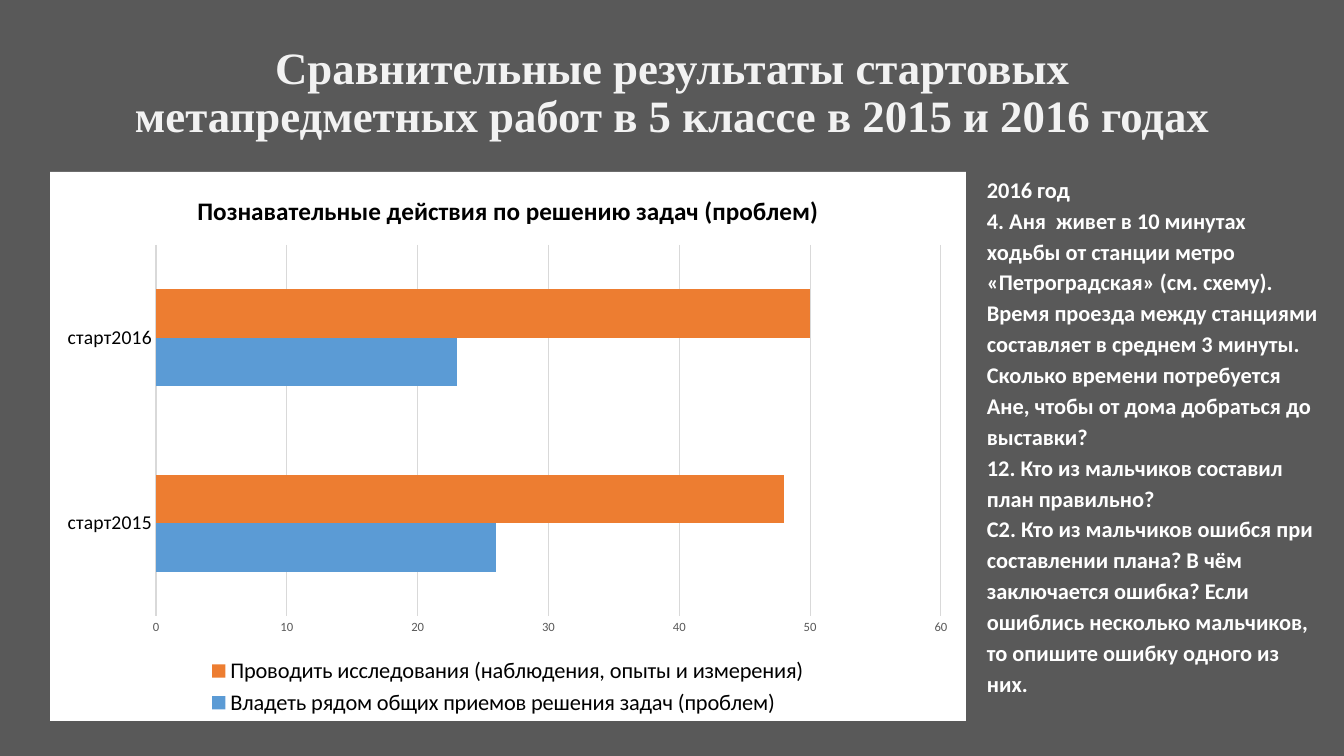
from lxml import etree
from pptx import Presentation
from pptx.chart.data import CategoryChartData
from pptx.dml.color import RGBColor
from pptx.enum.chart import XL_CHART_TYPE, XL_LEGEND_POSITION, XL_TICK_MARK
from pptx.enum.text import MSO_ANCHOR, PP_ALIGN
from pptx.oxml import parse_xml
from pptx.oxml.ns import nsdecls, qn
from pptx.util import Pt

BAR_CLUSTERED = XL_CHART_TYPE.BAR_CLUSTERED
LEGEND_BOTTOM = XL_LEGEND_POSITION.BOTTOM
NO_TICK = XL_TICK_MARK.NONE
MIDDLE = MSO_ANCHOR.MIDDLE
CENTER = PP_ALIGN.CENTER

BACKGROUND = RGBColor(0x59, 0x59, 0x59)
TITLE_COLOR = RGBColor(0xF2, 0xF2, 0xF2)
WHITE = RGBColor(0xFF, 0xFF, 0xFF)
BLACK = RGBColor(0x00, 0x00, 0x00)
GRID = RGBColor(0xD9, 0xD9, 0xD9)
BLUE = RGBColor(0x5B, 0x9B, 0xD5)
ORANGE = RGBColor(0xED, 0x7D, 0x31)

TITLE = "Сравнительные результаты стартовых метапредметных работ в 5 классе в 2015 и 2016 годах"
CHART_TITLE = "Познавательные действия по решению задач (проблем)"
CATEGORIES = ["старт2015", "старт2016"]
SERIES = [
    ("Владеть рядом общих приемов решения задач (проблем)", (26, 23), BLUE),
    ("Проводить исследования (наблюдения, опыты и измерения)", (48, 50), ORANGE),
]
TASKS = [
    "2016 год",
    "4. Аня  живет в 10 минутах ходьбы от станции метро «Петроградская» (см. схему). "
    "Время проезда между станциями составляет в среднем 3 минуты. "
    "Сколько времени потребуется  Ане, чтобы от дома добраться до выставки?",
    "12. Кто из мальчиков составил план правильно?",
    "С2. Кто из мальчиков ошибся при составлении плана? В чём заключается ошибка? "
    "Если ошиблись несколько мальчиков, то опишите ошибку одного из них.",
]

SLIDE_SIZE = (1344, 756)
TITLE_AREA = (93, 21, 1159, 146)
CHART_AREA = (50, 172, 916, 549)
PLOT_AREA = (156, 245, 785, 371)
TASKS_AREA = (977, 167, 353, 541)


def px(length):
    return round(length * 914400 / 100.8)


def emu(area):
    return [px(length) for length in area]


def set_font(font, size, color, bold=False, name="Calibri"):
    font.name = name
    font.size = Pt(size)
    font.bold = bold
    font.color.rgb = color


def add_title(slide):
    title = slide.shapes.title
    title.left, title.top, title.width, title.height = emu(TITLE_AREA)
    frame = title.text_frame
    frame.text = TITLE
    frame.vertical_anchor = MIDDLE
    para = frame.paragraphs[0]
    para.alignment = CENTER
    para.line_spacing = 0.9
    set_font(para.font, 32, TITLE_COLOR, True, "Times New Roman")


def place_plot(plot_area):
    for old in plot_area.findall(qn("c:layout")):
        plot_area.remove(old)
    left, top, width, height = CHART_AREA
    plot_left, plot_top, plot_width, plot_height = PLOT_AREA
    settings = {
        "layoutTarget": "inner",
        "xMode": "edge",
        "yMode": "edge",
        "x": (plot_left - left) / width,
        "y": (plot_top - top) / height,
        "w": plot_width / width,
        "h": plot_height / height,
    }
    layout = parse_xml(f"<c:layout {nsdecls('c')}/>")
    manual = etree.SubElement(layout, qn("c:manualLayout"))
    for tag, value in settings.items():
        etree.SubElement(manual, qn(f"c:{tag}")).set("val", str(value))
    plot_area.insert(0, layout)


def add_results_chart(slide):
    data = CategoryChartData()
    data.categories = CATEGORIES
    for name, values, color in SERIES:
        data.add_series(name, values)
    chart = slide.shapes.add_chart(BAR_CLUSTERED, *emu(CHART_AREA), data).chart
    set_font(chart.font, 10, BLACK)

    chart.has_title = True
    chart.chart_title.include_in_layout = False
    para = chart.chart_title.text_frame.paragraphs[0]
    para.text = CHART_TITLE
    set_font(para.font, 18, BLACK, True)

    chart.has_legend = True
    chart.legend.position = LEGEND_BOTTOM
    chart.legend.include_in_layout = False
    set_font(chart.legend.font, 16, BLACK)

    for axis, size, color in ((chart.category_axis, 14, BLACK), (chart.value_axis, 9, BACKGROUND)):
        axis.major_tick_mark = axis.minor_tick_mark = NO_TICK
        set_font(axis.tick_labels.font, size, color)
    chart.value_axis.minimum_scale = 0
    chart.value_axis.maximum_scale = 60
    chart.value_axis.major_unit = 10
    chart.value_axis.format.line.fill.background()
    for line in (chart.category_axis.format.line, chart.value_axis.major_gridlines.format.line):
        line.color.rgb = GRID
        line.width = Pt(0.75)

    plot = chart.plots[0]
    plot.gap_width = 182
    plot.vary_by_categories = False
    for series, (name, values, color) in zip(plot.series, SERIES):
        series.format.fill.solid()
        series.format.fill.fore_color.rgb = color

    space = chart.element
    place_plot(space.find(qn("c:chart")).find(qn("c:plotArea")))
    background = parse_xml(
        f"<c:spPr {nsdecls('c', 'a')}><a:solidFill><a:srgbClr val=\"{WHITE}\"/></a:solidFill>"
        "<a:ln><a:noFill/></a:ln></c:spPr>"
    )
    space.find(qn("c:chart")).addnext(background)


def add_tasks(slide):
    box = slide.shapes.add_textbox(*emu(TASKS_AREA))
    frame = box.text_frame
    frame.word_wrap = True
    frame.text = "\n".join(TASKS)
    for para in frame.paragraphs:
        para.line_spacing = 1.15
        set_font(para.font, 16, WHITE, True)


def main():
    deck = Presentation()
    deck.slide_width, deck.slide_height = emu(SLIDE_SIZE)
    slide = deck.slides.add_slide(deck.slide_layouts[5])
    slide.background.fill.solid()
    slide.background.fill.fore_color.rgb = BACKGROUND
    add_title(slide)
    add_results_chart(slide)
    add_tasks(slide)
    deck.save("out.pptx")


if __name__ == "__main__":
    main()
